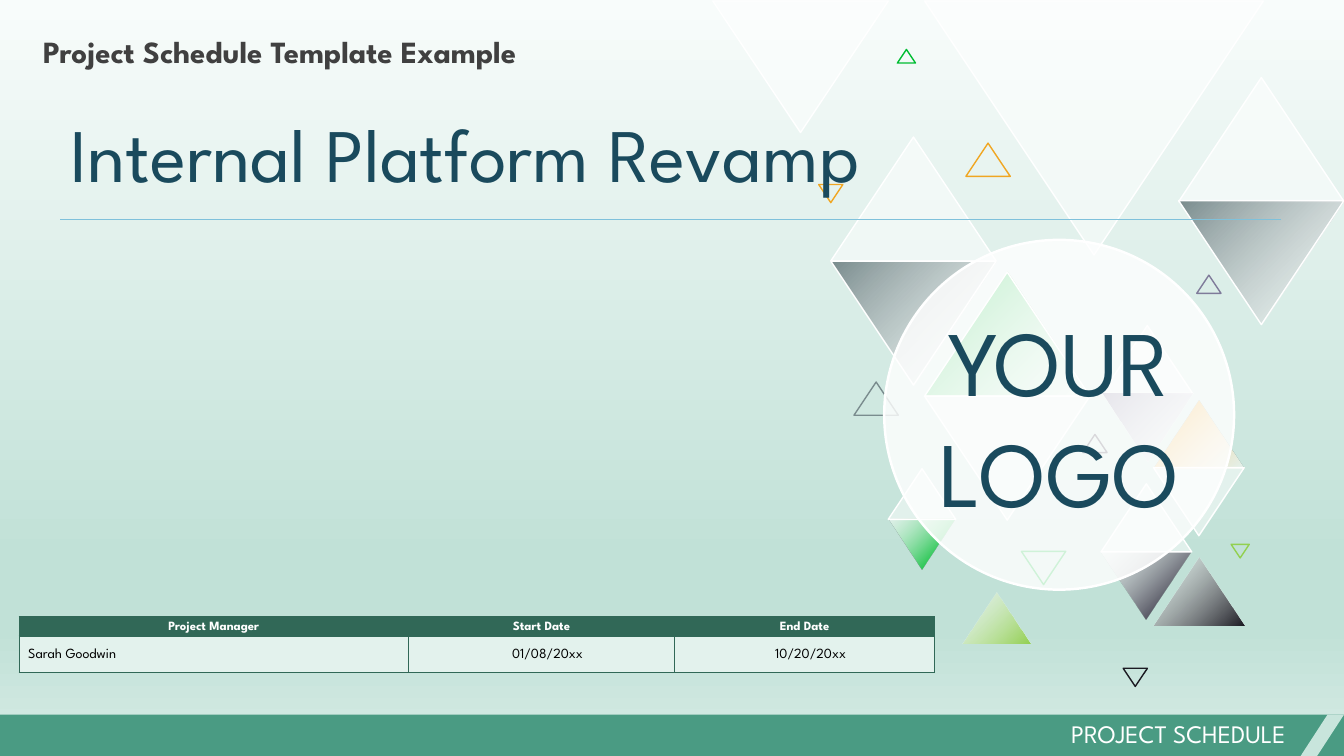
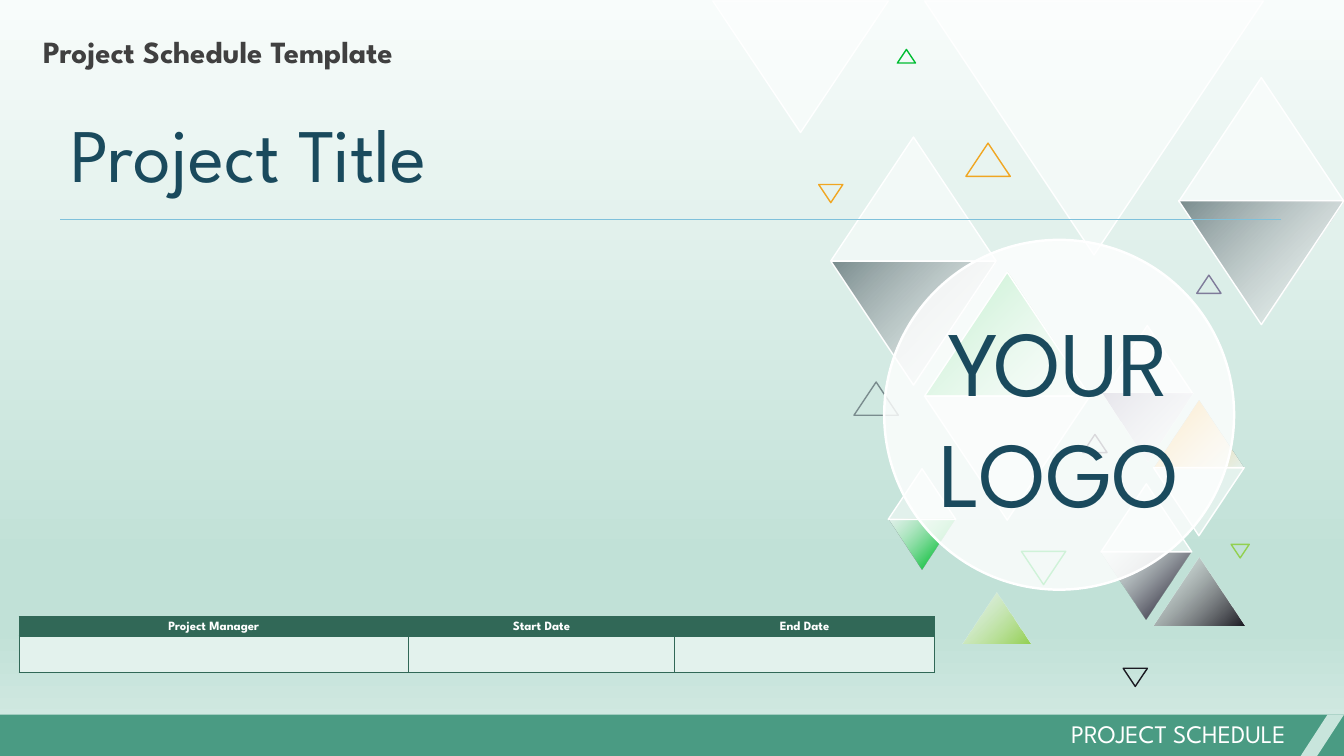
"""Build two project schedule cover slides with a shared triangle backdrop."""
from lxml import etree
from pptx import Presentation
from pptx.dml.color import RGBColor
from pptx.enum import shapes, text
from pptx.oxml import ns
from pptx.util import Inches, Pt

COLORS = {
    "white": "FFFFFF", "black": "000000", "ink": "1B1A22", "slate": "373545",
    "gray": "7A8C8E", "mauve": "7F7B9A", "green": "00BD32", "lime": "92D050",
    "amber": "F0A622", "heading": "404040", "navy": "1A4A5D", "sky": "7FC1DB",
    "band": "4A9B83", "slash": "C8E5DC", "forest": "316857", "mint": "E3F2ED",
    "mist": "F8FCFB", "sage": "C1E1D7", "dew": "D6EBE5",
}
LEFT, CENTER, RIGHT = text.PP_ALIGN.LEFT, text.PP_ALIGN.CENTER, text.PP_ALIGN.RIGHT
STYLES = {
    "heading": ({"size": Pt(22), "bold": True}, "heading", LEFT),
    "footer": ({"size": Pt(18), "bold": False}, "white", RIGHT),
    "title": ({"size": Pt(54), "bold": False}, "navy", LEFT),
    "logo": ({"size": Pt(66), "bold": False}, "navy", CENTER),
    "header": ({"size": Pt(9), "bold": True}, "white", CENTER),
    "name": ({"size": Pt(10), "bold": False}, "black", LEFT),
    "date": ({"size": Pt(10), "bold": False}, "black", CENTER),
}
TRIANGLES = [
    (8.24, 1.36, 1.64, "up", "glass", "white"),
    (8.24, 2.59, 1.64, "down", "fade out", "gray"),
    (9.17, 2.7, 1.64, "up", "fade in", "green"),
    (9.17, 3.93, 1.64, "down", "glass", "white"),
    (9.17, 0.01, 3.36, "down", "glass", "white"),
    (11.44, 5.53, 0.9, "up", "fade out", "ink"),
    (10.92, 5.47, 0.9, "down", "fade in", "slate"),
    (10.92, 4.8, 0.9, "up", "glass", "white"),
    (10.93, 3.23, 0.9, "up", "glass", "white"),
    (10.93, 3.9, 0.9, "down", "fade out", "mauve"),
    (11.44, 3.97, 0.9, "up", "fade in", "amber"),
    (11.44, 4.64, 0.9, "down", "glass", "white"),
    (9.55, 5.88, 0.67, "up", "fade out", "lime"),
    (8.81, 5.15, 0.67, "down", "fade in", "green"),
    (8.81, 4.65, 0.67, "up", "glass", "white"),
    (11.69, 0.77, 1.64, "up", "glass", "white"),
    (11.69, 1.99, 1.64, "down", "fade out", "gray"),
    (10.13, 5.47, 0.44, "down", "outline", "green"),
    (8.47, 3.79, 0.44, "up", "outline", "gray"),
    (10.74, 4.31, 0.24, "up", "outline", "slate"),
    (11.14, 6.63, 0.24, "down", "outline", "ink"),
    (8.12, 1.83, 0.24, "down", "outline", "amber"),
    (11.87, 2.73, 0.24, "up", "outline", "mauve"),
    (8.9, 0.49, 0.18, "up", "outline", "green"),
    (12.21, 5.4, 0.18, "down", "outline", "lime"),
    (9.58, 1.42, 0.44, "up", "outline", "amber"),
    (7.07, 0.01, 1.74, "down", "glass", "white"),
]
HEADERS = ["Project Manager", "Start Date", "End Date"]
COVERS = [
    ("Project Schedule Template Example", "Internal Platform Revamp",
     ["Sarah Goodwin", "01/08/20xx", "10/20/20xx"]),
    ("Project Schedule Template", "Project Title", ["", "", ""]),
]


def paint(fill, holder, stops, angle=225):
    """Fill with one color, or with a gradient of (position, color, opacity) stops."""
    fill.solid()
    fill.fore_color.rgb = RGBColor.from_string(COLORS[stops[0][1]])
    solid = holder.find(ns.qn("a:solidFill"))
    if len(stops) == 1:
        etree.SubElement(solid[0], ns.qn("a:alpha"), val=str(stops[0][2] * 1000))
        return
    gradient = etree.Element(ns.qn("a:gradFill"), rotWithShape="1")
    stop_list = etree.SubElement(gradient, ns.qn("a:gsLst"))
    for position, color, opacity in stops:
        stop = etree.SubElement(stop_list, ns.qn("a:gs"), pos=str(position * 1000))
        tone = etree.SubElement(stop, ns.qn("a:srgbClr"), val=COLORS[color])
        etree.SubElement(tone, ns.qn("a:alpha"), val=str(opacity * 1000))
    etree.SubElement(gradient, ns.qn("a:lin"), ang=str(angle * 60000), scaled="0")
    holder.replace(solid, gradient)


def write(frame, wording, style):
    """Put wording into a text frame, one paragraph a line."""
    values, color, align = STYLES[style]
    frame.text = wording
    for paragraph in frame.paragraphs:
        paragraph.alignment = align
        for run in paragraph.runs:
            run.font.name = "League Spartan"
            run.font.color.rgb = RGBColor.from_string(COLORS[color])
            for key, value in values.items():
                setattr(run.font, key, value)


prs = Presentation()
prs.slide_width, prs.slide_height = Inches(13.33), Inches(7.5)
master = prs.slide_master
backdrop = master.background.fill
backdrop.solid()
paint(backdrop, master.element.find(".//" + ns.qn("p:bgPr")),
      [(0, "mist", 100), (74, "sage", 100), (83, "sage", 100), (100, "dew", 100)], 90)

for heading, title, details in COVERS:
    slide = prs.slides.add_slide(prs.slide_layouts[6])

    cluster = slide.shapes.add_group_shape()
    for left, top, width, pointing, finish, color in TRIANGLES:
        triangle = cluster.shapes.add_shape(
            shapes.MSO_SHAPE.ISOSCELES_TRIANGLE,
            Inches(left), Inches(top), Inches(width), Inches(width * 0.75))
        triangle.shadow.inherit = False
        triangle.rotation = 180 if pointing == "down" else 0
        finishes = {
            "glass": [(0, "white", 50)],
            "fade out": [(0, color, 100), (100, "white", 50)],
            "fade in": [(0, "white", 50), (82, color, 100)],
        }
        if finish == "outline":
            triangle.fill.background()
        else:
            paint(triangle.fill, triangle.element.spPr, finishes[finish])
        if finish in ("outline", "glass") or width > 1:
            edge = color if finish == "outline" else "white"
            triangle.line.color.rgb = RGBColor.from_string(COLORS[edge])
            triangle.line.width = Pt(1)
        else:
            triangle.line.fill.background()

    for kind, left, width, color in [
        (shapes.MSO_SHAPE.RECTANGLE, 0, 13.33, "band"),
        (shapes.MSO_SHAPE.PARALLELOGRAM, 12.9, 0.43, "slash"),
    ]:
        strip = slide.shapes.add_shape(
            kind, Inches(left), Inches(7.09), Inches(width), Inches(0.41))
        strip.shadow.inherit = False
        strip.fill.solid()
        strip.fill.fore_color.rgb = RGBColor.from_string(COLORS[color])
        strip.line.fill.background()
    strip.adjustments[0] = 0.65

    for wording, style, left, top, width, height in [
        (heading, "heading", 0.33, 0.28, 8.61, 0.47),
        ("PROJECT SCHEDULE", "footer", 5.25, 7.08, 7.6, 0.4),
        (title, "title", 0.6, 1.01, 12.27, 1.01),
    ]:
        label = slide.shapes.add_textbox(
            Inches(left), Inches(top), Inches(width), Inches(height)).text_frame
        label.word_wrap = True
        label.auto_size = text.MSO_AUTO_SIZE.SHAPE_TO_FIT_TEXT
        write(label, wording, style)

    rule = slide.shapes.add_connector(
        shapes.MSO_CONNECTOR.STRAIGHT,
        Inches(0.6), Inches(2.18), Inches(12.71), Inches(2.18))
    rule.line.color.rgb = RGBColor.from_string(COLORS["sky"])
    rule.line.width = Pt(1)
    etree.SubElement(rule.element.spPr, ns.qn("a:effectLst"))

    logo = slide.shapes.add_shape(
        shapes.MSO_SHAPE.OVAL, Inches(8.77), Inches(2.38), Inches(3.47), Inches(3.47))
    logo.shadow.inherit = False
    paint(logo.fill, logo.element.spPr, [(0, "white", 81)])
    logo.line.color.rgb = RGBColor.from_string(COLORS["white"])
    logo.line.width = Pt(1.75)
    for key, value in {
        "margin_left": 0, "margin_right": 0, "margin_top": 0, "margin_bottom": 0,
        "word_wrap": False, "vertical_anchor": text.MSO_ANCHOR.MIDDLE,
    }.items():
        setattr(logo.text_frame, key, value)
    write(logo.text_frame, "YOUR\nLOGO", "logo")

    summary = slide.shapes.add_table(
        2, 3, Inches(0.19), Inches(6.12), Inches(9.08), Inches(0.55)).table
    for column, width in zip(summary.columns, (3.86, 2.64, 2.58)):
        column.width = Inches(width)
    for row, height in zip(summary.rows, (0.19, 0.36)):
        row.height = Inches(height)
    for row, wordings, styles, color, indents in [
        (0, HEADERS, ["header"] * 3, "forest", [0.01] * 3),
        (1, details, ["name", "date", "date"], "mint", [0.09, 0.13, 0.13]),
    ]:
        for column, (wording, style, indent) in enumerate(zip(wordings, styles, indents)):
            cell = summary.cell(row, column)
            for key, value in {
                "margin_left": Inches(indent), "margin_right": Inches(0.01),
                "margin_top": Inches(0.01), "margin_bottom": 0,
                "vertical_anchor": text.MSO_ANCHOR.MIDDLE,
            }.items():
                setattr(cell, key, value)
            write(cell.text_frame, wording, style)
            borders = cell._tc.get_or_add_tcPr()
            for side in ("lnL", "lnR", "lnT", "lnB"):
                border = etree.SubElement(borders, ns.qn("a:" + side), w=str(Pt(1)))
                ink = etree.SubElement(border, ns.qn("a:solidFill"))
                etree.SubElement(ink, ns.qn("a:srgbClr"), val=COLORS["forest"])
            cell.fill.solid()
            cell.fill.fore_color.rgb = RGBColor.from_string(COLORS[color])

prs.save("out.pptx")
